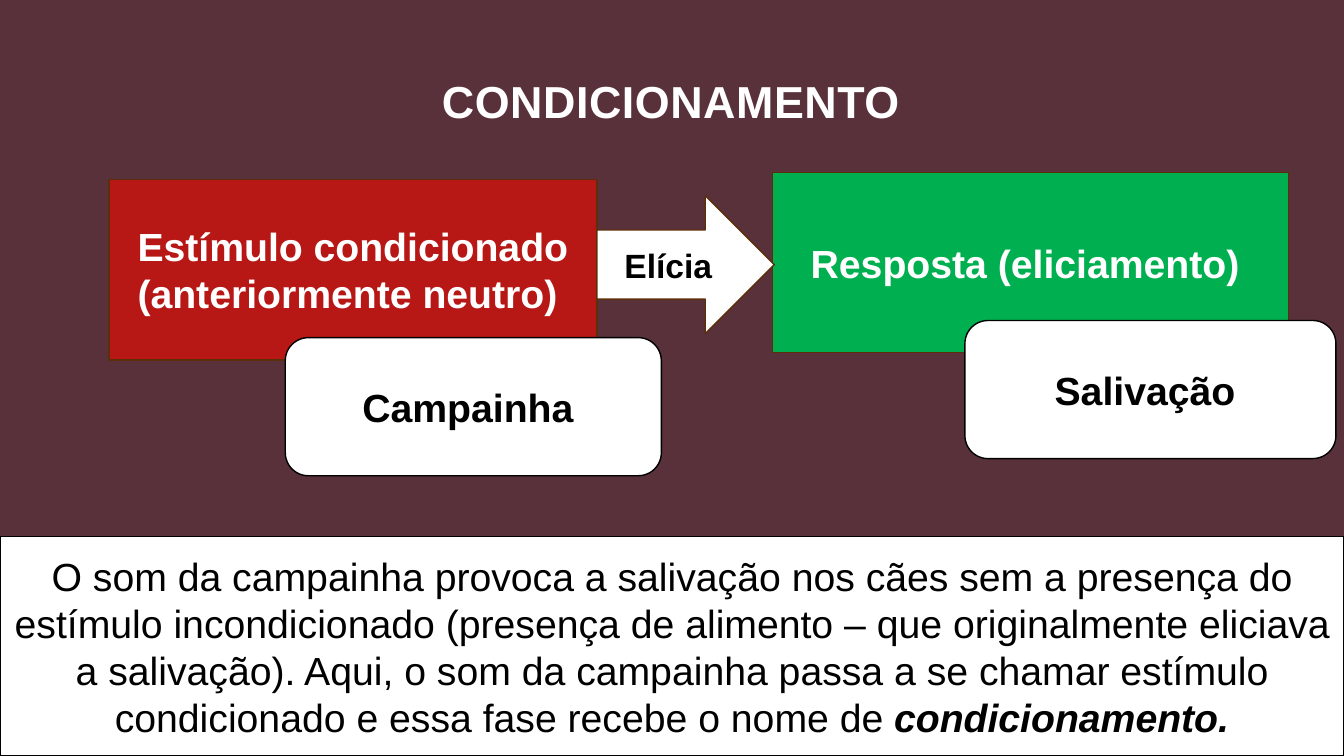
from dataclasses import dataclass

from pptx import Presentation
from pptx.dml.color import RGBColor
from pptx.enum import shapes, text
from pptx.util import Inches, Pt

SHAPE = shapes.MSO_SHAPE


@dataclass(frozen=True)
class Theme:
    """Colours, font and type sizes of the slide."""
    font: str = "Arial"
    wine: str = "58313B"
    red: str = "B71815"
    green: str = "00B050"
    brown: str = "5D2E0A"
    white: str = "FFFFFF"
    black: str = "000000"
    title: int = 32
    body: int = 28
    label: int = 24


T = Theme()


@dataclass(frozen=True)
class Run:
    """A stretch of text with one format."""
    text: str
    color: str = T.black
    size: int = T.body
    bold: bool = True
    italic: bool = False


@dataclass(frozen=True)
class Box:
    """A filled, outlined shape with centred text."""
    kind: shapes.MSO_SHAPE
    at: tuple[float, float, float, float]
    fill: str
    line: str
    runs: tuple[Run, ...]


BOXES = (
    Box(SHAPE.RECTANGLE, (1.08, 1.78, 4.84, 1.79), T.red, T.brown,
        (Run("Estímulo condicionado (anteriormente neutro) ", T.white),)),
    Box(SHAPE.RECTANGLE, (7.66, 1.71, 5.12, 1.79), T.green, T.brown,
        (Run("Resposta (eliciamento) ", T.white),)),
    Box(SHAPE.RIGHT_ARROW, (5.92, 1.94, 1.76, 1.37), T.white, T.brown,
        (Run("Elícia", size=T.label),)),
    Box(SHAPE.ROUNDED_RECTANGLE, (2.83, 3.35, 3.73, 1.37), T.white, T.black,
        (Run("Campainha "),)),
    Box(SHAPE.ROUNDED_RECTANGLE, (9.57, 3.18, 3.68, 1.37), T.white, T.black,
        (Run("Salivação "),)),
    Box(SHAPE.RECTANGLE, (0, 5.32, 13.33, 2.18), T.white, T.black,
        (Run("O som da campainha provoca a salivação nos cães sem a presença do "
             "estímulo incondicionado (presença de alimento – que originalmente "
             "eliciava a salivação). Aqui, o som da campainha passa a se chamar "
             "estímulo condicionado e essa fase recebe o nome de ", bold=False),
         Run("condicionamento.", italic=True))),
)


def write(tf, runs: tuple[Run, ...], **frame) -> None:
    """Fill a text frame with one centred paragraph."""
    for name, value in {"word_wrap": True, **frame}.items():
        setattr(tf, name, value)
    p = tf.paragraphs[0]
    p.alignment = text.PP_ALIGN.CENTER
    for run in runs:
        r = p.add_run()
        r.text = run.text
        formats = {"name": T.font, "size": Pt(run.size),
                   "bold": run.bold, "italic": run.italic}
        for name, value in formats.items():
            setattr(r.font, name, value)
        r.font.color.rgb = RGBColor.from_string(run.color)


def add_title(s) -> None:
    """Add the slide heading."""
    sp = s.shapes.title
    for name, value in zip(("left", "top", "width", "height"),
                           (0.79, 0.68, 11.73, 0.8)):
        setattr(sp, name, Inches(value))
    write(sp.text_frame, (Run("CONDICIONAMENTO", T.white, T.title),),
          vertical_anchor=text.MSO_ANCHOR.TOP, margin_left=0, margin_right=0,
          margin_top=Inches(0.05), margin_bottom=0)
    sp.text_frame.paragraphs[0].runs[0].font._element.set("spc", "40")


def add_box(s, box: Box) -> None:
    """Draw one box with its text."""
    sp = s.shapes.add_shape(box.kind, *map(Inches, box.at))
    sp.shadow.inherit = False
    sp.fill.solid()
    sp.fill.fore_color.rgb = RGBColor.from_string(box.fill)
    sp.line.color.rgb = RGBColor.from_string(box.line)
    sp.line.width = Pt(1)
    write(sp.text_frame, box.runs, vertical_anchor=text.MSO_ANCHOR.MIDDLE)


def main() -> None:
    """Build and save the slide."""
    prs = Presentation()
    prs.slide_width, prs.slide_height = Inches(13.33), Inches(7.5)
    title_only = prs.slide_layouts.get_by_name("Title Only")
    s = prs.slides.add_slide(title_only)
    s.background.fill.solid()
    s.background.fill.fore_color.rgb = RGBColor.from_string(T.wine)
    add_title(s)
    for box in BOXES:
        add_box(s, box)
    prs.save("out.pptx")


if __name__ == "__main__":
    main()
